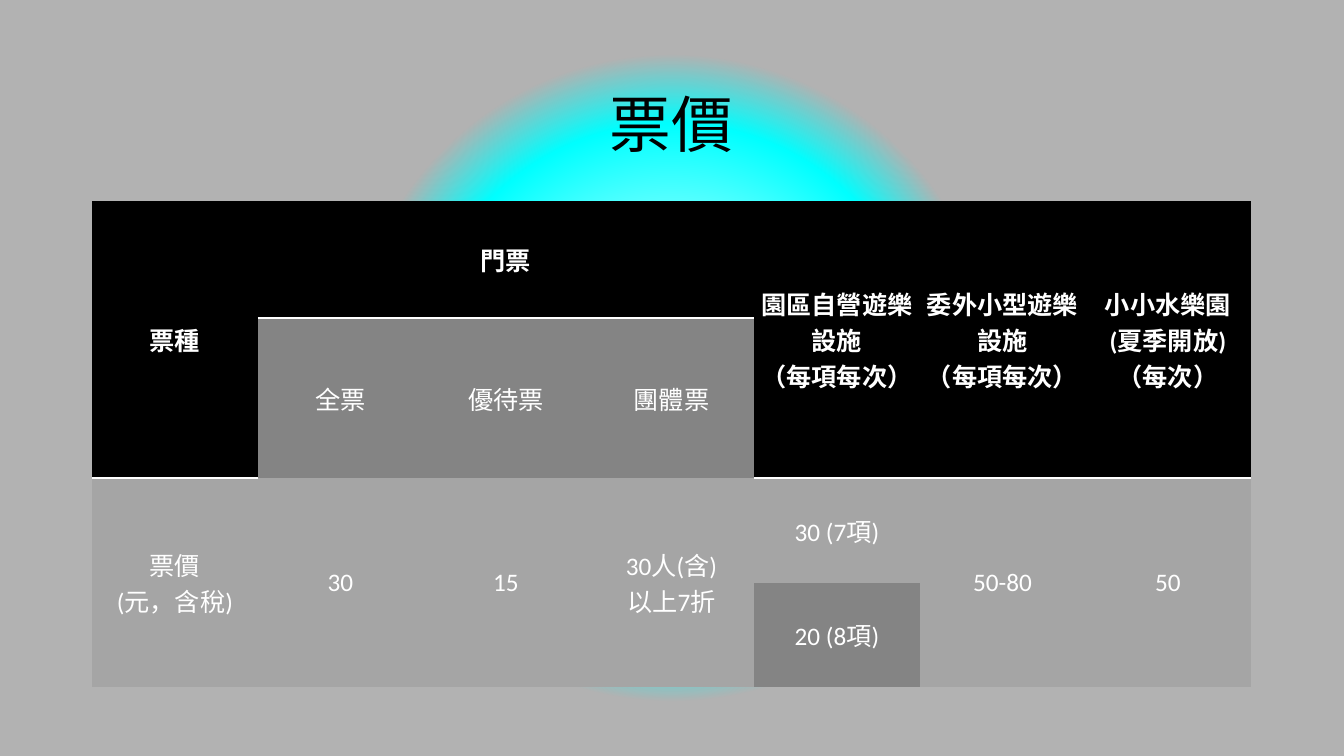
from lxml import etree
from pptx import Presentation
from pptx import util as u
from pptx.dml.color import RGBColor
from pptx.enum import text
from pptx.oxml import parse_xml
from pptx.oxml.ns import nsdecls, qn

BLACK = RGBColor(0x00, 0x00, 0x00)
WHITE = RGBColor(0xFF, 0xFF, 0xFF)
CYAN = RGBColor(0x00, 0xFF, 0xFF)
BACKDROP = RGBColor(0xB2, 0xB2, 0xB2)
LIGHT = RGBColor(0xA5, 0xA5, 0xA5)
DARK = RGBColor(0x84, 0x84, 0x84)
NO_STYLE = "{2D5ABB26-0587-4C30-8999-92F81FD0307C}"


class Deck:
    LATIN, CJK = "Calibri", "Noto Sans CJK JP"
    EMU_PER_PX = 9072

    def __init__(self, width, height):
        self.prs = Presentation()
        self.prs.slide_width = self.px(width)
        self.prs.slide_height = self.px(height)
        self.s = self.prs.slides.add_slide(self.prs.slide_layouts[6])

    def px(self, n):
        return u.Emu(n * self.EMU_PER_PX)

    def glow(self, stops):
        """Circular gradient background, from the centre outwards."""
        self.s.background.fill.solid()
        solid = self.s.element.find(".//" + qn("p:bgPr") + "/" + qn("a:solidFill"))
        gs = "".join(f'<a:gs pos="{pos * 1000}"><a:srgbClr val="{color}"/></a:gs>'
                     for pos, color in stops)
        solid.getparent().replace(solid, parse_xml(
            f'<a:gradFill {nsdecls("a")} rotWithShape="1"><a:gsLst>{gs}</a:gsLst>'
            '<a:path path="circle"><a:fillToRect l="50000" t="50000" r="50000" b="50000"/>'
            '</a:path></a:gradFill>'))

    def paragraph(self, tf, wording, color, **font):
        """One centred paragraph; line feeds become line breaks."""
        p = tf.paragraphs[0]
        p.text = wording
        p.alignment = text.PP_ALIGN.CENTER
        for r in p.runs:
            for name, value in font.items():
                setattr(r.font, name, value)
            r.font.color.rgb = color
            ea = etree.SubElement(r.font._element, qn("a:ea"))
            ea.set("typeface", self.CJK)
        return p

    def title(self, wording, x, y, w, h):
        tf = self.s.shapes.add_textbox(*map(self.px, (x, y, w, h))).text_frame
        tf.word_wrap = True
        tf.vertical_anchor = text.MSO_ANCHOR.MIDDLE
        p = self.paragraph(tf, wording, BLACK, name=self.CJK, size=u.Pt(44))
        p.line_spacing = 0.9

    def table(self, x, y, w, columns, heights):
        frame = self.s.shapes.add_table(len(heights), columns,
                                        *map(self.px, (x, y, w, sum(heights))))
        frame._element.find(".//" + qn("a:tableStyleId")).text = NO_STYLE
        table = frame.table
        edges = [round(w * i / columns) for i in range(columns + 1)]
        for column, left, right in zip(table.columns, edges, edges[1:]):
            column.width = self.px(right - left)
        for row, height in zip(table.rows, heights):
            row.height = self.px(height)
        return table

    def cell(self, table, row, col, wording, fill, rows=1, cols=1, head=False):
        for i in range(row, row + rows):
            for j in range(col, col + cols):
                part = table.cell(i, j)
                part.fill.solid()
                part.fill.fore_color.rgb = fill
                if head:
                    self.underline(part)
        c = table.cell(row, col)
        if rows * cols > 1:
            c.merge(table.cell(row + rows - 1, col + cols - 1))
        c.vertical_anchor = text.MSO_ANCHOR.MIDDLE
        for side in ("left", "top", "right", "bottom"):
            setattr(c, "margin_" + side, self.px(3))
        self.paragraph(c.text_frame, wording, WHITE,
                       name=self.LATIN, size=u.Pt(18), bold=head)

    def underline(self, cell):
        cell._tc.get_or_add_tcPr().insert(0, parse_xml(
            f'<a:lnB {nsdecls("a")} w="{u.Pt(2)}"><a:solidFill>'
            f'<a:srgbClr val="{WHITE}"/></a:solidFill></a:lnB>'))


def main():
    deck = Deck(1344, 756)
    deck.glow([(3, WHITE), (33, CYAN), (42, BACKDROP)])
    deck.title("票價", 92, 55, 1159, 146)

    prices = deck.table(92, 201, 1159, 7, [117, 160, 105, 104])

    # Header: ticket kinds and facilities
    deck.cell(prices, 0, 0, "票種", BLACK, rows=2, head=True)
    deck.cell(prices, 0, 1, "門票", BLACK, cols=3, head=True)
    facilities = ["園區自營遊樂設施\n（每項每次）", "委外小型遊樂設施\n（每項每次）",
                  "小小水樂園\n(夏季開放)\n（每次）"]
    for col, name in enumerate(facilities, 4):
        deck.cell(prices, 0, col, name, BLACK, rows=2, head=True)
    for col, name in enumerate(["全票", "優待票", "團體票"], 1):
        deck.cell(prices, 1, col, name, DARK)

    # Prices: every column spans two rows except the split one
    amounts = {0: "票價\n(元，含稅)", 1: "30", 2: "15", 3: "30人(含)\n以上7折",
               5: "50-80", 6: "50"}
    for col, amount in amounts.items():
        deck.cell(prices, 2, col, amount, LIGHT, rows=2)
    deck.cell(prices, 2, 4, "30 (7項)", LIGHT)
    deck.cell(prices, 3, 4, "20 (8項)", DARK)

    deck.prs.save("out.pptx")


if __name__ == "__main__":
    main()
